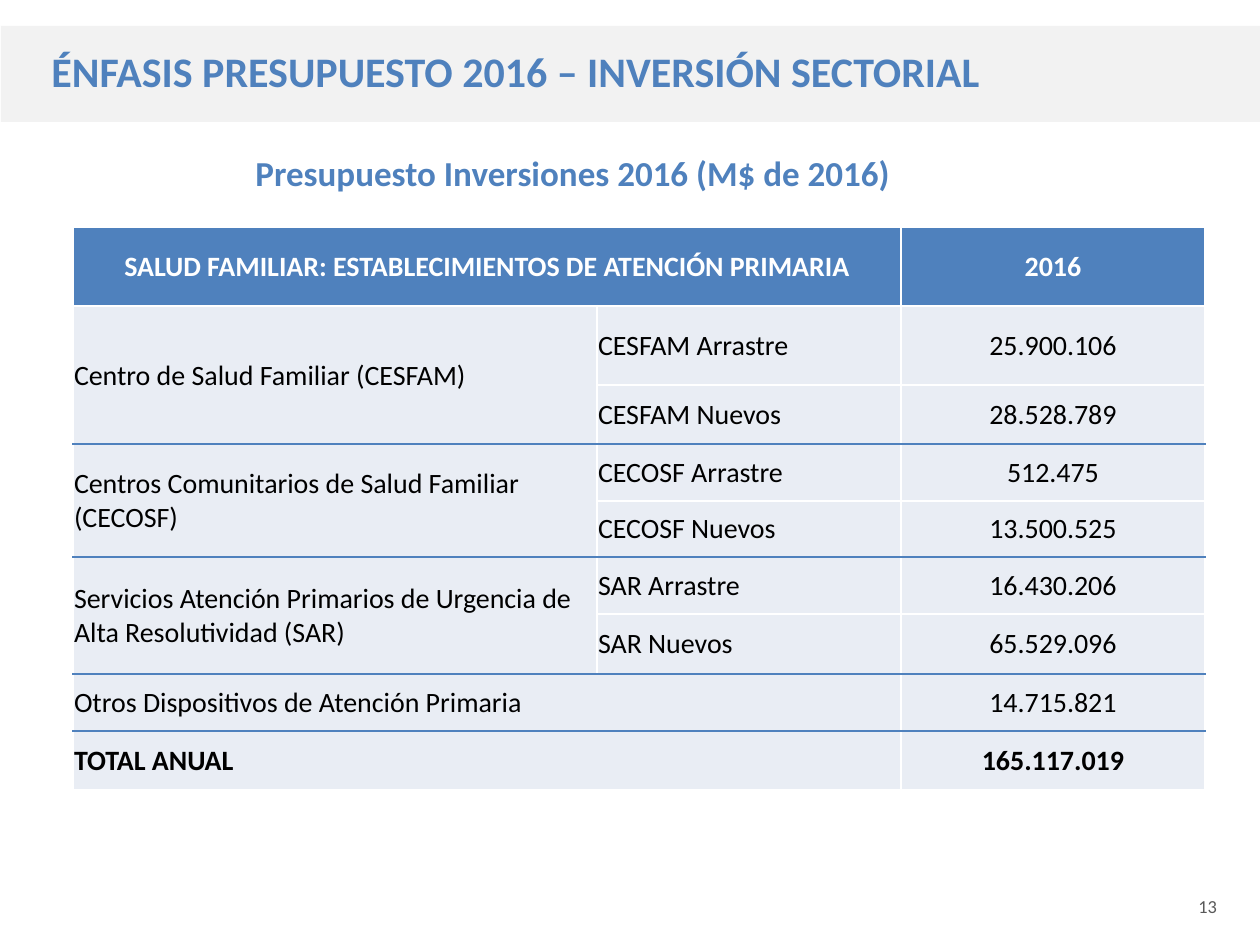
"""Builds the slide on the 2016 sectoral investment budget."""
from dataclasses import dataclass

from lxml import etree
from pptx import Presentation
from pptx.dml.color import RGBColor
from pptx.enum.shapes import MSO_SHAPE
from pptx.enum.text import MSO_ANCHOR, MSO_AUTO_SIZE, PP_ALIGN
from pptx.oxml.ns import qn
from pptx.util import Pt

RECTANGLE = MSO_SHAPE.RECTANGLE
MIDDLE = MSO_ANCHOR.MIDDLE
FIT_SHAPE = MSO_AUTO_SIZE.SHAPE_TO_FIT_TEXT
LEFT, CENTER = PP_ALIGN.LEFT, PP_ALIGN.CENTER

BLUE = RGBColor(0x4F, 0x81, 0xBD)
BAND_GRAY = RGBColor(0xF2, 0xF2, 0xF2)
NUMBER_GRAY = RGBColor(0x59, 0x59, 0x59)
ROW_TINT = RGBColor(0xE9, 0xED, 0xF4)
WHITE = RGBColor(0xFF, 0xFF, 0xFF)
BLACK = RGBColor(0, 0, 0)

FONT = "Calibri"
PX_PER_INCH = 126
COLUMN_WIDTHS = (524, 304, 304)
ROW_HEIGHTS = (79, 79, 59, 57, 56, 57, 60, 57, 59)


@dataclass(frozen=True)
class Box:
    left: int
    top: int
    width: int
    height: int


@dataclass(frozen=True)
class TextStyle:
    size: float
    color: RGBColor
    bold: bool = False


@dataclass(frozen=True)
class Edge:
    color: RGBColor
    width: float = 1


@dataclass(frozen=True)
class Item:
    amount: str
    name: str = ""


@dataclass(frozen=True)
class Group:
    label: str
    items: tuple[Item, ...]
    bold: bool = False


GROUPS = (
    Group("Centro de Salud Familiar (CESFAM)",
          (Item("25.900.106", "CESFAM Arrastre"), Item("28.528.789", "CESFAM Nuevos"))),
    Group("Centros Comunitarios de Salud Familiar (CECOSF)",
          (Item("512.475", "CECOSF Arrastre"), Item("13.500.525", "CECOSF Nuevos"))),
    Group("Servicios Atención Primarios de Urgencia de Alta Resolutividad (SAR)",
          (Item("16.430.206", "SAR Arrastre"), Item("65.529.096", "SAR Nuevos"))),
    Group("Otros Dispositivos de Atención Primaria", (Item("14.715.821"),)),
    Group("TOTAL ANUAL", (Item("165.117.019"),), bold=True),
)

WHITE_EDGE = Edge(WHITE)
HEADER_EDGE = Edge(WHITE, 1.5)
GROUP_EDGE = Edge(BLUE)


def px(length: int) -> int:
    """Turn px into EMU."""
    return round(length * 914400 / PX_PER_INCH)


def place(box: Box) -> tuple[int, int, int, int]:
    """Give the box's position and size in EMU."""
    return px(box.left), px(box.top), px(box.width), px(box.height)


def write(frame, text: str, style: TextStyle, align: PP_ALIGN = LEFT) -> None:
    """Put one run of styled text into a frame."""
    paragraph = frame.paragraphs[0]
    paragraph.alignment = align
    run = paragraph.add_run()
    run.text = text
    run.font.name = FONT
    run.font.size = Pt(style.size)
    run.font.bold = style.bold
    run.font.color.rgb = style.color


def add_band(slide, box: Box):
    """Add a plain gray rectangle."""
    band = slide.shapes.add_shape(RECTANGLE, *place(box))
    band.shadow.inherit = False
    band.fill.solid()
    band.fill.fore_color.rgb = BAND_GRAY
    band.line.fill.background()
    return band


def add_label(slide, box: Box, text: str, style: TextStyle) -> None:
    """Add a one-line text box."""
    frame = slide.shapes.add_textbox(*place(box)).text_frame
    frame.word_wrap = False
    frame.auto_size = FIT_SHAPE
    write(frame, text, style)


def format_cell(cell, fill: RGBColor, top: Edge, bottom: Edge) -> None:
    """Set a cell's insets, fill and four borders."""
    cell.margin_left = cell.margin_right = cell.margin_top = px(1)
    cell.margin_bottom = 0
    cell.vertical_anchor = MIDDLE
    cell.fill.solid()
    cell.fill.fore_color.rgb = fill
    properties = cell._tc.get_or_add_tcPr()
    edges = {"a:lnL": WHITE_EDGE, "a:lnR": WHITE_EDGE, "a:lnT": top, "a:lnB": bottom}
    for index, (tag, edge) in enumerate(edges.items()):
        line = etree.Element(qn(tag), w=str(Pt(edge.width)))
        solid = etree.SubElement(line, qn("a:solidFill"))
        etree.SubElement(solid, qn("a:srgbClr"), val=str(edge.color))
        properties.insert(index, line)


def fill_header(table) -> None:
    """Write the heading row."""
    style = TextStyle(16, WHITE, True)
    for cell in table.rows[0].cells:
        format_cell(cell, BLUE, WHITE_EDGE, HEADER_EDGE)
    table.cell(0, 0).merge(table.cell(0, 1))
    write(table.cell(0, 0).text_frame,
          "SALUD FAMILIAR: ESTABLECIMIENTOS DE ATENCIÓN PRIMARIA", style, CENTER)
    write(table.cell(0, 2).text_frame, "2016", style, CENTER)


def fill_group(table, first: int, group: Group, top: Edge, bottom: Edge) -> None:
    """Write one group of investment rows."""
    style = TextStyle(16, BLACK, group.bold)
    last = first + len(group.items) - 1
    for row, item in enumerate(group.items, first):
        inner_top = top if row == first else WHITE_EDGE
        inner_bottom = bottom if row == last else WHITE_EDGE
        format_cell(table.cell(row, 0), ROW_TINT, top, bottom)
        for column in (1, 2):
            format_cell(table.cell(row, column), ROW_TINT, inner_top, inner_bottom)
        if item.name:
            write(table.cell(row, 1).text_frame, item.name, style)
        write(table.cell(row, 2).text_frame, item.amount, style, CENTER)
    label_end = table.cell(last, 0 if group.items[0].name else 1)
    table.cell(first, 0).merge(label_end)
    write(table.cell(first, 0).text_frame, group.label, style)


def add_budget_table(slide) -> None:
    """Add the table of investments."""
    box = Box(73, 227, sum(COLUMN_WIDTHS), sum(ROW_HEIGHTS))
    table = slide.shapes.add_table(len(ROW_HEIGHTS), len(COLUMN_WIDTHS), *place(box)).table
    table.horz_banding = False
    for column, width in zip(table.columns, COLUMN_WIDTHS):
        column.width = px(width)
    for row, height in zip(table.rows, ROW_HEIGHTS):
        row.height = px(height)
    fill_header(table)
    first, top = 1, HEADER_EDGE
    for group in GROUPS:
        bottom = WHITE_EDGE if group is GROUPS[-1] else GROUP_EDGE
        fill_group(table, first, group, top, bottom)
        first, top = first + len(group.items), bottom


def main() -> None:
    """Build and save the slide."""
    deck = Presentation()
    deck.slide_width, deck.slide_height = px(1260), px(945)
    slide = deck.slides.add_slide(deck.slide_layouts[6])
    add_label(slide, Box(1186, 889, 60, 37), "13", TextStyle(10.5, NUMBER_GRAY))
    add_band(slide, Box(1, 26, 1260, 96))
    title = add_band(slide, Box(39, 44, 1205, 54)).text_frame
    title.vertical_anchor = MIDDLE
    title.word_wrap = True
    write(title, "ÉNFASIS PRESUPUESTO 2016 – INVERSIÓN SECTORIAL", TextStyle(24, BLUE, True))
    add_label(slide, Box(243, 145, 696, 55), "Presupuesto Inversiones 2016 (M$ de 2016)",
              TextStyle(20, BLUE, True))
    add_budget_table(slide)
    deck.save("out.pptx")


if __name__ == "__main__":
    main()
